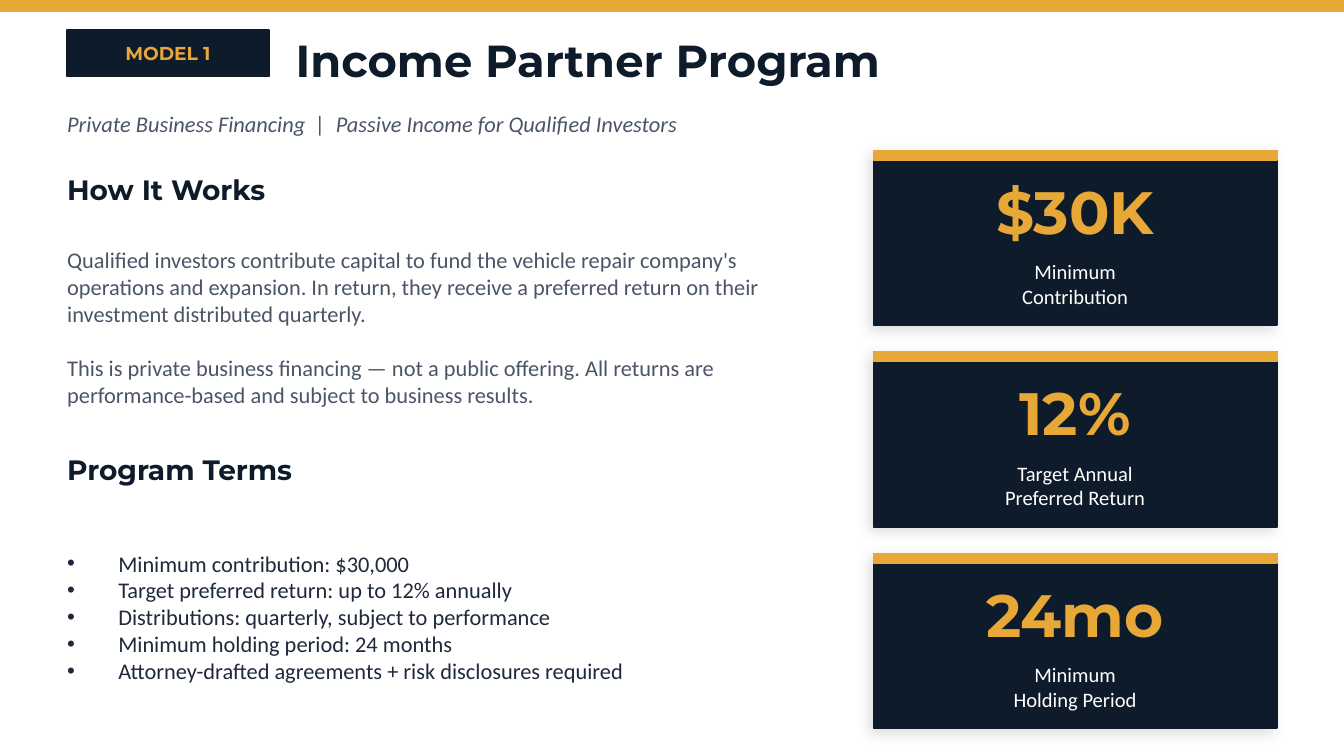
import pptx
import pptx.util
import pptx.dml.color
import pptx.enum.shapes
import pptx.enum.text
import pptx.oxml
import pptx.oxml.ns
import lxml.etree

Pt = pptx.util.Pt
RGB = pptx.dml.color.RGBColor
ALIGN = pptx.enum.text.PP_ALIGN
qn = pptx.oxml.ns.qn

NAVY = RGB(0x0D, 0x1B, 0x2A)
GOLD = RGB(0xE8, 0xA8, 0x38)
SLATE = RGB(0x4A, 0x55, 0x68)
INK = RGB(0x1E, 0x29, 0x3B)
WHITE = RGB(0xFF, 0xFF, 0xFF)
HEAD = "Montserrat"
BODY = "Calibri"

ABOUT = (
    "Qualified investors contribute capital to fund the vehicle repair company's "
    "operations and expansion. In return, they receive a preferred return on "
    "their investment distributed quarterly.\n"
    "This is private business financing — not a public offering. All returns "
    "are performance-based and subject to business results."
)
TERMS = (
    "Minimum contribution: $30,000\n"
    "Target preferred return: up to 12% annually\n"
    "Distributions: quarterly, subject to performance\n"
    "Minimum holding period: 24 months\n"
    "Attorney-drafted agreements + risk disclosures required"
)
CARDS = [
    ("$30K", "Minimum\nContribution"),
    ("12%", "Target Annual\nPreferred Return"),
    ("24mo", "Minimum\nHolding Period"),
]


def place(shape, x, y, w, h):
    shape.left, shape.top, shape.width, shape.height = Pt(x), Pt(y), Pt(w), Pt(h)


def write(shape, text, size, color, font=BODY, bold=False, italic=False,
          align=ALIGN.LEFT, gap=0):
    frame = shape.text_frame
    frame.text = text
    frame.word_wrap = True
    frame.auto_size = pptx.enum.text.MSO_AUTO_SIZE.NONE
    frame.vertical_anchor = pptx.enum.text.MSO_ANCHOR.MIDDLE
    frame.margin_left = frame.margin_right = Pt(0)
    frame.margin_top = frame.margin_bottom = Pt(0)
    for i, para in enumerate(frame.paragraphs):
        para.alignment = align
        para.space_before = Pt(gap if i else 0)
        for run in para.runs:
            run.font.name = font
            run.font.size = Pt(size)
            run.font.bold = bold
            run.font.italic = italic
            run.font.color.rgb = color


def label(slide, x, y, w, h, text, size, color, **style):
    box = slide.shapes.add_textbox(Pt(x), Pt(y), Pt(w), Pt(h))
    write(box, text, size, color, **style)


def block(slide, x, y, w, h, color):
    kind = pptx.enum.shapes.MSO_SHAPE.RECTANGLE
    shape = slide.shapes.add_shape(kind, Pt(x), Pt(y), Pt(w), Pt(h))
    shape.shadow.inherit = False
    shape.fill.solid()
    shape.fill.fore_color.rgb = color
    shape.line.color.rgb = color
    shape.line.width = Pt(1)
    return shape


def shade(shape):
    effects = shape._element.spPr.find(qn("a:effectLst"))
    outer = lxml.etree.SubElement(
        effects, qn("a:outerShdw"), blurRad=str(Pt(7)), dist=str(Pt(3)),
        dir=str(135 * 60000), algn="bl", rotWithShape="0")
    tint = lxml.etree.SubElement(outer, qn("a:srgbClr"), val="000000")
    lxml.etree.SubElement(tint, qn("a:alpha"), val="12000")


def bullet(para, indent):
    props = para._p.get_or_add_pPr()
    props.set("marL", str(Pt(indent)))
    props.set("indent", str(-Pt(indent)))
    lxml.etree.SubElement(props, qn("a:buChar"), char="•")


def header(slide, x, y, w):
    tag = block(slide, x, y + 1.44, 108, 25.2, NAVY)
    write(tag, "MODEL 1", 10, GOLD, font=HEAD, bold=True, align=ALIGN.CENTER)
    title = slide.shapes.title
    place(title, x + 122.4, y, w - 122.4, 34.56)
    write(title, "Income Partner Program", 24, NAVY, font=HEAD, bold=True)
    label(slide, x, y + 40.32, w, 23.04,
          "Private Business Financing  |  Passive Income for Qualified Investors",
          12, SLATE, italic=True)


def detail(slide, x, y, w):
    head = dict(font=HEAD, bold=True)
    label(slide, x, y, w, 27.36, "How It Works", 15, NAVY, **head)
    label(slide, x, y + 31.68, w, 111.6, ABOUT, 12, SLATE, gap=14.5)
    label(slide, x, y + 149.76, w, 27.36, "Program Terms", 15, NAVY, **head)
    terms = slide.placeholders[1]
    place(terms, x, y + 181.44, w, 122.4)
    write(terms, TERMS, 12, INK)
    for para in terms.text_frame.paragraphs:
        bullet(para, 27.36)


def card(slide, x, y, w, h, value, note):
    shade(block(slide, x, y, w, h, NAVY))
    block(slide, x, y, w, 5.04, GOLD)
    label(slide, x, y + 8.64, w, 46.8, value, 32, GOLD, font=HEAD, bold=True,
          align=ALIGN.CENTER)
    label(slide, x, y + 56.16, w, 30.24, note, 11, WHITE, align=ALIGN.CENTER)


def main():
    deck = pptx.Presentation()
    deck.slide_width, deck.slide_height = Pt(720), Pt(405)
    slide = deck.slides.add_slide(deck.slide_layouts[1])
    block(slide, 0, 0, 720, 5.76, GOLD)
    header(slide, 36, 14.4, 648)
    detail(slide, 36, 87.84, 396)
    for i, (value, note) in enumerate(CARDS):
        card(slide, 468, 80.64 + 108 * i, 216, 93.6, value, note)
    deck.save("out.pptx")


if __name__ == "__main__":
    main()
